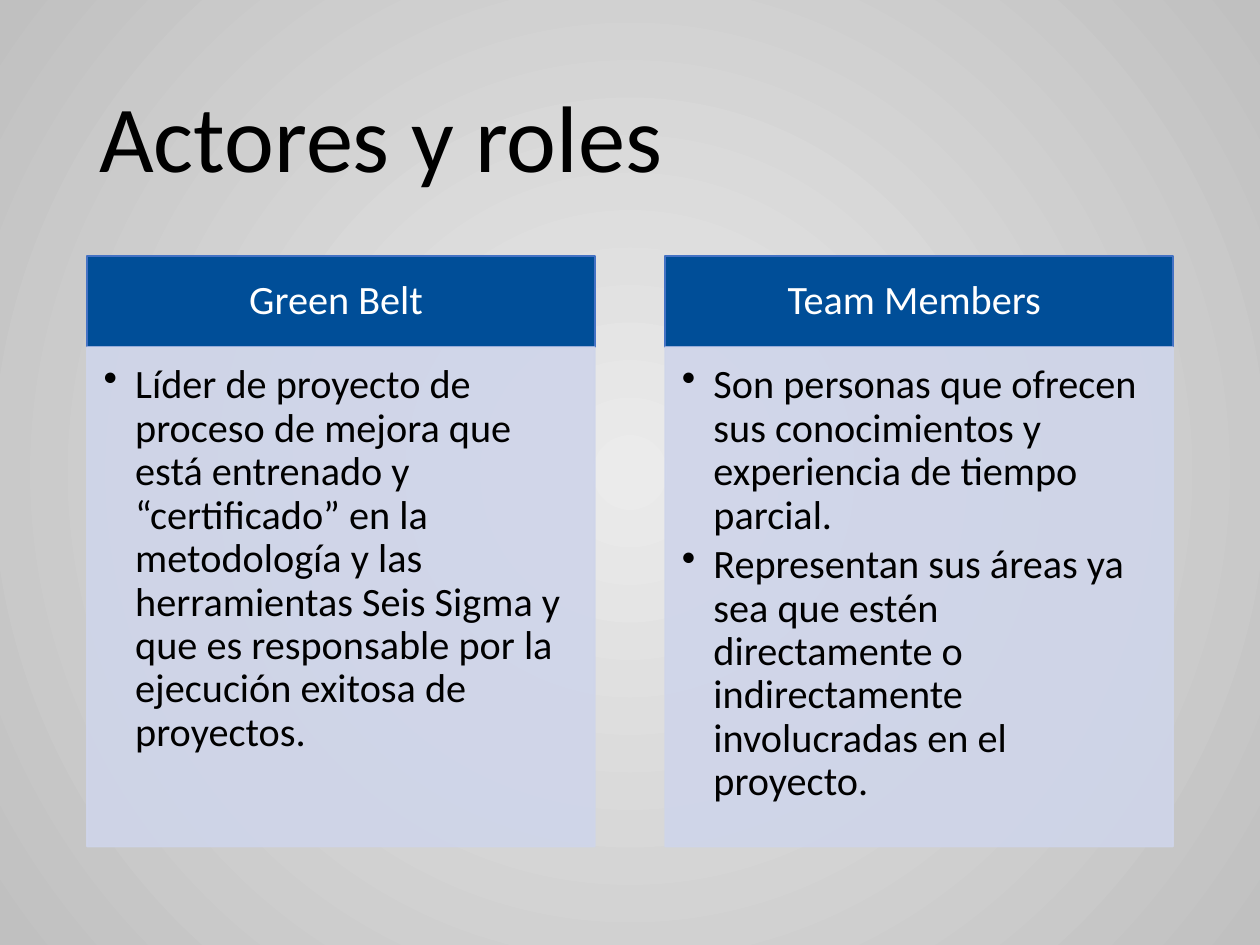
from lxml import etree
from pptx import Presentation
from pptx.dml.color import RGBColor
from pptx.enum.shapes import MSO_SHAPE
from pptx.enum.text import MSO_ANCHOR, PP_ALIGN
from pptx.oxml.ns import qn
from pptx.util import Pt

RECTANGLE = MSO_SHAPE.RECTANGLE
TOP, MIDDLE = MSO_ANCHOR.TOP, MSO_ANCHOR.MIDDLE
LEFT, CENTER = PP_ALIGN.LEFT, PP_ALIGN.CENTER

COLORS = {
    "center": "EBEBEB",
    "edge": "C0C0C0",
    "header": "004E98",
    "header_line": "4472C4",
    "body": "CFD5EA",
    "black": "000000",
    "white": "FFFFFF",
}
FONT = "Calibri"
SLIDE_WIDTH, SLIDE_HEIGHT = 720, 540
MARGIN = 49.7
COLUMN_WIDTH = 290.2
HEADER_TOP, HEADER_HEIGHT = 146.3, 52.1
BODY_TOP, BODY_HEIGHT = 198.4, 285.4

ROLES = [
    ("Green Belt ", [
        "Líder de proyecto de proceso de mejora que está entrenado y “certificado” en la "
        "metodología y las herramientas Seis Sigma y que es responsable por la ejecución "
        "exitosa de proyectos.",
    ]),
    ("Team Members ", [
        "Son personas que ofrecen sus conocimientos y experiencia de tiempo parcial.",
        "Representan sus áreas ya sea que estén directamente o indirectamente "
        "involucradas en el proyecto.",
    ]),
]


def rgb(name):
    return RGBColor.from_string(COLORS[name])


def set_alpha(fill_parent, percent):
    """Make the solid fill directly under the given element partly transparent."""
    color = fill_parent.find(qn("a:solidFill")).find(qn("a:srgbClr"))
    etree.SubElement(color, qn("a:alpha"), val=str(percent * 1000))


def add_bullet(paragraph, indent):
    properties = paragraph._p.get_or_add_pPr()
    properties.set("marL", str(Pt(indent)))
    properties.set("indent", str(-Pt(indent)))
    etree.SubElement(properties, qn("a:buChar"), char="•")


def write_text(frame, paragraphs, size=23, color="black", align=LEFT, anchor=TOP,
               insets=(7.2, 3.6, 7.2, 3.6), space_after=0, bullet_indent=None):
    """Fill the frame; insets are left, top, right, bottom."""
    frame.word_wrap = True
    frame.vertical_anchor = anchor
    (frame.margin_left, frame.margin_top,
     frame.margin_right, frame.margin_bottom) = map(Pt, insets)
    for index, text in enumerate(paragraphs):
        paragraph = frame.add_paragraph() if index else frame.paragraphs[0]
        paragraph.alignment = align
        paragraph.line_spacing = 0.9
        paragraph.space_before = Pt(0)
        paragraph.space_after = Pt(space_after)
        if bullet_indent:
            add_bullet(paragraph, bullet_indent)
        run = paragraph.add_run()
        run.text = text
        run.font.name = FONT
        run.font.size = Pt(size)
        run.font.color.rgb = rgb(color)


class SlideBuilder:
    def __init__(self, slide):
        self.slide = slide

    def radial_background(self, center, edge):
        fill = self.slide.background.fill
        fill.gradient()
        for stop, color in zip(fill.gradient_stops, (center, edge)):
            stop.color.rgb = rgb(color)
        gradient = self.slide.element.find(".//" + qn("a:gradFill"))
        linear = gradient.find(qn("a:lin"))
        radial = etree.Element(qn("a:path"), path="circle")
        etree.SubElement(radial, qn("a:fillToRect"),
                         {side: "50000" for side in "ltrb"})
        gradient.replace(linear, radial)

    def title(self, text, left, top, width, height):
        box = self.slide.shapes.add_textbox(*map(Pt, (left, top, width, height)))
        write_text(box.text_frame, [text], size=54, anchor=MIDDLE)

    def panel(self, paragraphs, left, top, width, height, fill, line,
              opacity=100, **text_format):
        shape = self.slide.shapes.add_shape(
            RECTANGLE, *map(Pt, (left, top, width, height)))
        shape.shadow.inherit = False
        shape.fill.solid()
        shape.fill.fore_color.rgb = rgb(fill)
        shape.line.color.rgb = rgb(line)
        shape.line.width = Pt(1)
        if opacity < 100:
            properties = shape.element.spPr
            set_alpha(properties, opacity)
            set_alpha(properties.find(qn("a:ln")), opacity)
        write_text(shape.text_frame, paragraphs, **text_format)

    def role_column(self, role, duties, left):
        self.panel([role], left, HEADER_TOP, COLUMN_WIDTH, HEADER_HEIGHT,
                   "header", "header_line", color="white", align=CENTER,
                   anchor=MIDDLE, insets=(13, 7.2, 13, 7.2))
        self.panel(duties, left, BODY_TOP, COLUMN_WIDTH, BODY_HEIGHT,
                   "body", "body", opacity=90, insets=(9.6, 9.6, 13, 14.4),
                   space_after=3.45, bullet_indent=18)


def main():
    presentation = Presentation()
    presentation.slide_width = Pt(SLIDE_WIDTH)
    presentation.slide_height = Pt(SLIDE_HEIGHT)
    builder = SlideBuilder(presentation.slides.add_slide(presentation.slide_layouts[6]))

    builder.radial_background("center", "edge")
    builder.title("Actores y roles", MARGIN, 28.8, SLIDE_WIDTH - 2 * MARGIN, 104.4)
    column_lefts = (MARGIN, SLIDE_WIDTH - MARGIN - COLUMN_WIDTH)
    for (role, duties), left in zip(ROLES, column_lefts):
        builder.role_column(role, duties, left)

    presentation.save("out.pptx")


if __name__ == "__main__":
    main()
